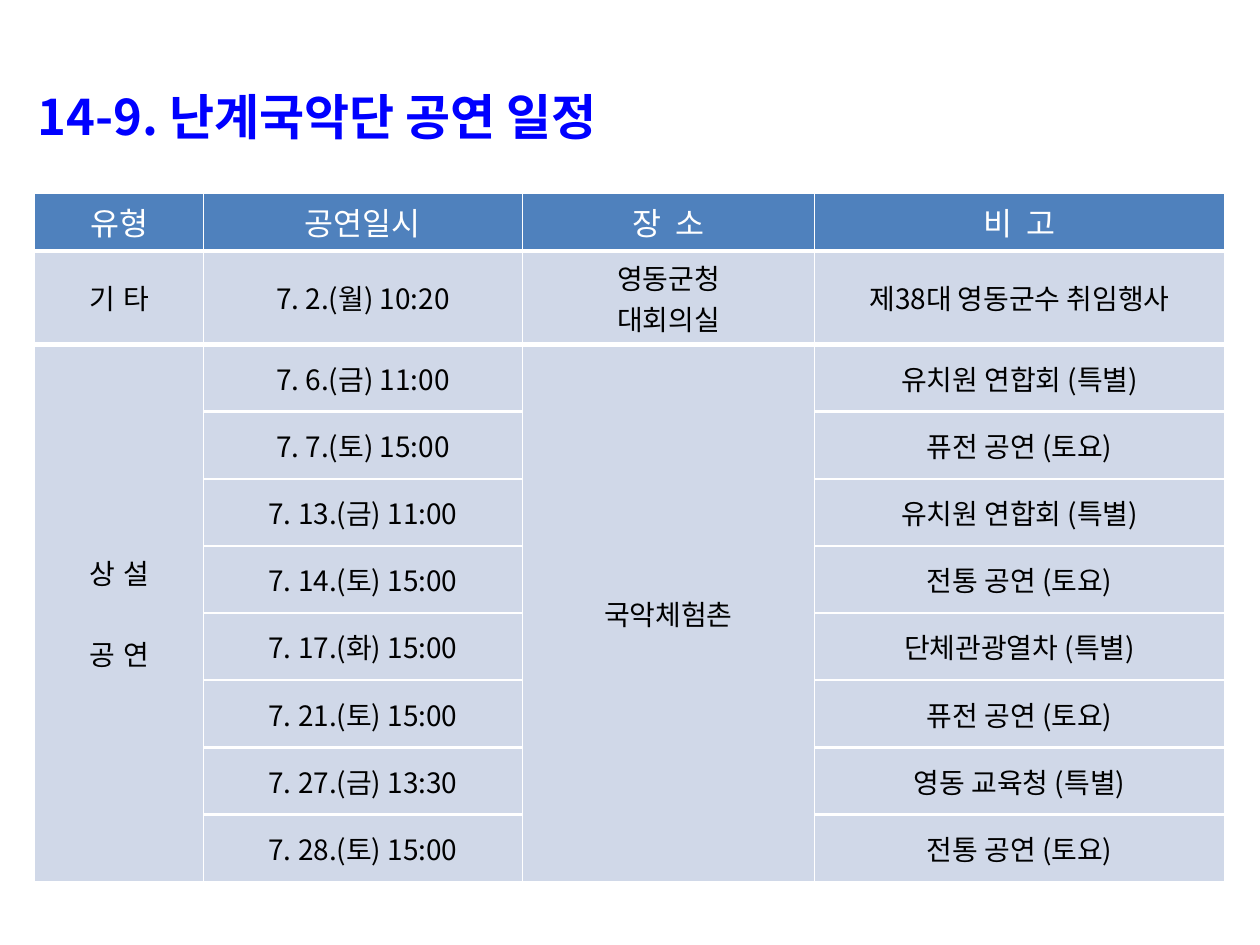
from pptx import Presentation
from pptx import util as u
from pptx.dml.color import RGBColor
from pptx.enum import text as t
from pptx.oxml import xmlchemy as x

Pt = u.Pt
BLUE = RGBColor(0x00, 0x00, 0xFF)
HEAD = RGBColor(0x4F, 0x81, 0xBD)
PALE = RGBColor(0xD0, 0xD8, 0xE8)
WHITE = RGBColor(0xFF, 0xFF, 0xFF)
BLACK = RGBColor(0x00, 0x00, 0x00)
FONT = "Noto Sans CJK KR"

HEADS = ["유형", "공연일시", "장  소", "비  고"]
OTHER = ["기   타", "7. 2.(월) 10:20", "영동군청\n대회의실", "제38대 영동군수 취임행사"]
SHOWS = [
    ("7. 6.(금) 11:00", "유치원 연합회 (특별)"),
    ("7. 7.(토) 15:00", "퓨전 공연 (토요)"),
    ("7. 13.(금) 11:00", "유치원 연합회 (특별)"),
    ("7. 14.(토) 15:00", "전통 공연 (토요)"),
    ("7. 17.(화) 15:00", "단체관광열차 (특별)"),
    ("7. 21.(토) 15:00", "퓨전 공연 (토요)"),
    ("7. 27.(금) 13:30", "영동 교육청 (특별)"),
    ("7. 28.(토) 15:00", "전통 공연 (토요)"),
]
COLS = [96.5, 182.2, 167, 234.3]
ROWS = [31.7, 48.2] + [38.4] * len(SHOWS)


def write(frame, words, size=16, color=BLACK, bold=False,
          align=t.PP_ALIGN.CENTER, line=None, gap=0, track=0):
    for i, part in enumerate(words.split("\n")):
        para = frame.paragraphs[0] if i == 0 else frame.add_paragraph()
        para.alignment = align
        if line:
            para.line_spacing = line
        if i and gap:
            para.space_before = Pt(gap)
        run = para.add_run()
        run.text = part
        font = run.font
        font.size, font.bold, font.name = Pt(size), bold, FONT
        font.color.rgb = color
        props = run._r.get_or_add_rPr()
        east = x.OxmlElement("a:ea")
        east.set("typeface", FONT)
        props.append(east)
        if track:
            props.set("spc", str(int(track * 100)))


class Page:
    def __init__(self, deck):
        self.slide = deck.slides.add_slide(deck.slide_layouts[5])

    def title(self, words, left, top, width, height):
        box = self.slide.shapes.title
        box.left, box.top = Pt(left), Pt(top)
        box.width, box.height = Pt(width), Pt(height)
        frame = box.text_frame
        frame.auto_size = t.MSO_AUTO_SIZE.NONE
        frame.word_wrap = True
        frame.vertical_anchor = t.MSO_ANCHOR.MIDDLE
        write(frame, words, size=28, color=BLUE, bold=True,
              align=t.PP_ALIGN.LEFT, line=1.4)

    def table(self, left, top, cols, rows):
        frame = self.slide.shapes.add_table(
            len(rows), len(cols), Pt(left), Pt(top), Pt(sum(cols)), Pt(sum(rows)))
        grid = frame.table
        for col, width in zip(grid.columns, cols):
            col.width = Pt(width)
        for row, height in zip(grid.rows, rows):
            row.height = Pt(height)
        for r in range(len(rows)):
            above = 1 if r == 0 else 3 if r < 3 else 1.5
            below = 3 if r < 2 else 1.5
            for c in range(len(cols)):
                cell = grid.cell(r, c)
                self.edge(cell, L=1, R=1, T=above, B=below)
                cell.fill.solid()
                cell.fill.fore_color.rgb = PALE if r else HEAD
                cell.vertical_anchor = t.MSO_ANCHOR.MIDDLE
        return grid

    def edge(self, cell, **sides):
        props = cell._tc.get_or_add_tcPr()
        for side, width in sides.items():
            line = x.OxmlElement("a:ln" + side)
            line.set("w", str(Pt(width)))
            fill = x.OxmlElement("a:solidFill")
            color = x.OxmlElement("a:srgbClr")
            color.set("val", str(WHITE))
            fill.append(color)
            line.append(fill)
            props.append(line)


def main():
    deck = Presentation()
    deck.slide_width, deck.slide_height = Pt(720), Pt(540)
    page = Page(deck)
    page.title("14-9. 난계국악단 공연 일정", 14.4, 36, 692, 46.8)
    grid = page.table(19.8, 110.2, COLS, ROWS)
    for c, words in enumerate(HEADS):
        write(grid.cell(0, c).text_frame, words, size=18, color=WHITE)
    for c, words in enumerate(OTHER):
        write(grid.cell(1, c).text_frame, words, track=0 if c else -1.5)
    for r, (time, note) in enumerate(SHOWS, 2):
        write(grid.cell(r, 1).text_frame, time)
        write(grid.cell(r, 3).text_frame, note)
    for c in (0, 2):
        grid.cell(2, c).merge(grid.cell(len(ROWS) - 1, c))
    write(grid.cell(2, 0).text_frame, "상   설\n공   연", gap=23.2, track=-1.5)
    write(grid.cell(2, 2).text_frame, "국악체험촌")
    deck.save("out.pptx")


if __name__ == "__main__":
    main()
